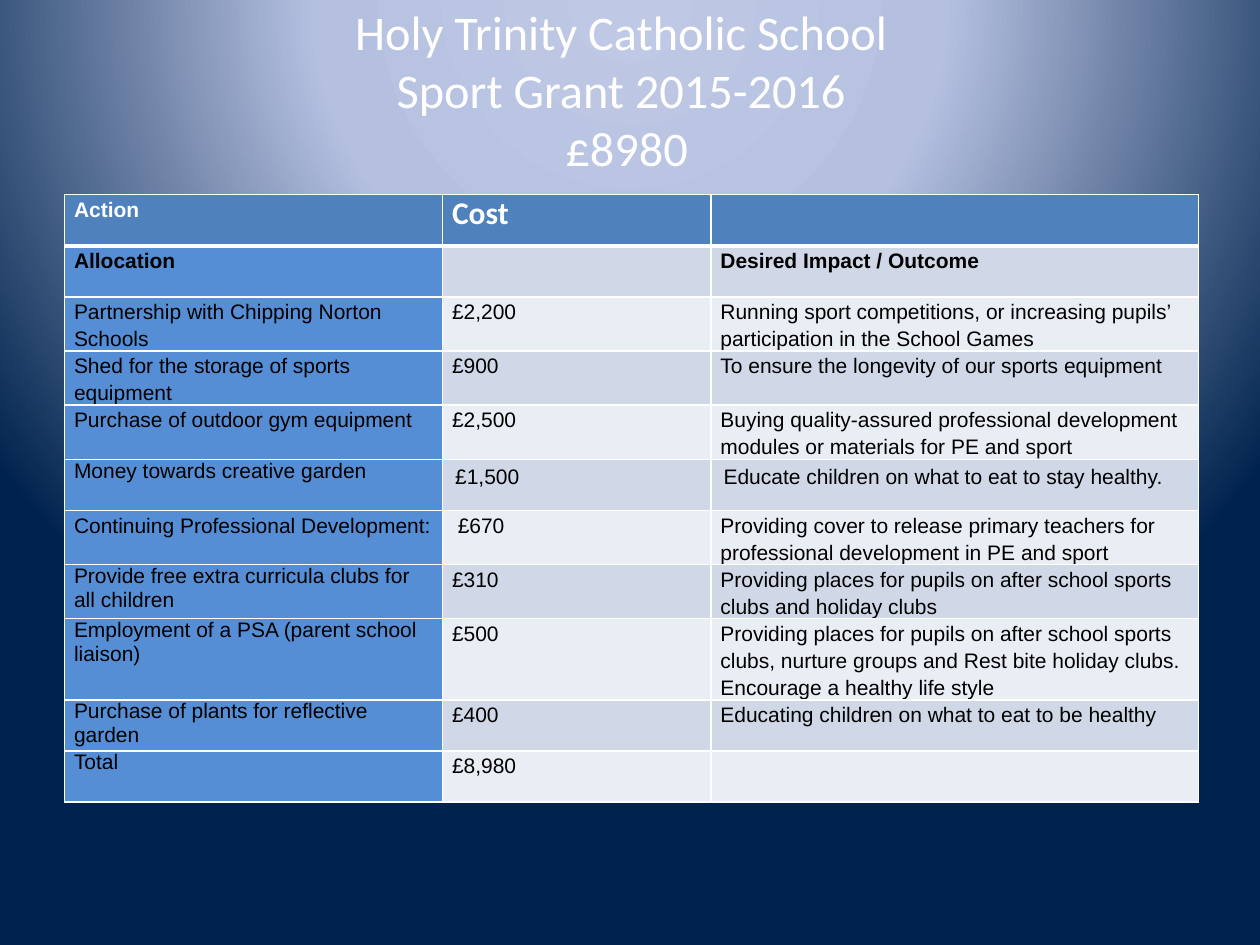
import dataclasses

import lxml.etree
import pptx
import pptx.dml.color
import pptx.enum.text
import pptx.oxml
import pptx.oxml.ns
import pptx.table
import pptx.util

Pt = pptx.util.Pt
qn = pptx.oxml.ns.qn

COLORS = {
    "white": "FFFFFF",
    "black": "000000",
    "header": "4F81BD",
    "action": "558ED5",
    "band_dark": "D0D8E8",
    "band_light": "E9EDF4",
    "glow": "BFC9E5",
    "haze": "B5C0E0",
    "navy": "00234D",
}
COLUMN_WIDTHS = (216, 153.4, 278.6)
ROW_HEIGHT = 29.2


@dataclasses.dataclass(frozen=True)
class GrantRow:
    action: str
    cost: str = ""
    outcome: str = ""
    bold: bool = False
    action_spacing: float = 1.15
    roomy: bool = False
    cost_indent: float = 0


GRANT_ROWS = (
    GrantRow("Action", "Cost", bold=True),
    GrantRow("Allocation", "", "Desired Impact / Outcome", bold=True),
    GrantRow("Partnership with Chipping Norton Schools", "£2,200",
             "Running sport competitions, or increasing pupils’ participation in the School Games"),
    GrantRow("Shed for the storage of sports equipment", "£900",
             "To ensure the longevity of our sports equipment"),
    GrantRow("Purchase of outdoor gym equipment", "£2,500",
             "Buying quality-assured professional development modules or materials for PE and sport"),
    GrantRow("Money towards creative garden", "£1,500",
             "Educate children on what to eat to stay healthy.",
             action_spacing=1, roomy=True),
    GrantRow("Continuing Professional Development:", "£670",
             "Providing cover to release primary teachers for professional development in PE and sport",
             cost_indent=3.3),
    GrantRow("Provide free extra curricula clubs for all children", "£310",
             "Providing places for pupils on after school sports clubs and holiday clubs",
             action_spacing=1),
    GrantRow("Employment of a PSA (parent school liaison)", "£500",
             "Providing places for pupils on after school sports clubs, nurture groups and "
             "Rest bite holiday clubs. Encourage a healthy life style", action_spacing=1),
    GrantRow("Purchase of plants for reflective garden", "£400",
             "Educating children on what to eat to be healthy", action_spacing=1),
    GrantRow("Total", "£8,980", action_spacing=1),
)


def rgb(name: str) -> pptx.dml.color.RGBColor:
    return pptx.dml.color.RGBColor.from_string(COLORS[name])


def paint_background(slide) -> None:
    fill = slide.background.fill
    fill.gradient()
    gradient = slide.element.find(".//" + qn("a:gradFill"))
    for child in list(gradient):
        gradient.remove(child)
    stops = lxml.etree.SubElement(gradient, qn("a:gsLst"))
    for position, name in ((0, "glow"), (40, "haze"), (100, "navy")):
        stop = lxml.etree.SubElement(stops, qn("a:gs"), pos=str(position * 1000))
        lxml.etree.SubElement(stop, qn("a:srgbClr"), val=COLORS[name])
    circle = lxml.etree.SubElement(gradient, qn("a:path"), path="circle")
    lxml.etree.SubElement(circle, qn("a:fillToRect"),
                          l="50000", t="-80000", r="50000", b="180000")


def write_title(slide) -> None:
    title = slide.shapes.title
    title.left, title.top, title.width, title.height = Pt(31), Pt(0), Pt(648), Pt(102)
    frame = title.text_frame
    frame.text = "Holy Trinity Catholic School\vSport Grant 2015-2016\v £8980"
    frame.vertical_anchor = pptx.enum.text.MSO_ANCHOR.MIDDLE
    heading = frame.paragraphs[0]
    heading.alignment = pptx.enum.text.PP_ALIGN.CENTER
    heading.font.name = "Calibri"
    heading.font.size = Pt(27.6)
    heading.font.color.rgb = rgb("white")


def draw_borders(cell: pptx.table._Cell, top: float, bottom: float) -> None:
    properties = cell._tc.get_or_add_tcPr()
    for edge, width in (("lnL", 1), ("lnR", 1), ("lnT", top), ("lnB", bottom)):
        line = lxml.etree.SubElement(properties, qn("a:" + edge), w=str(Pt(width)))
        solid = lxml.etree.SubElement(line, qn("a:solidFill"))
        lxml.etree.SubElement(solid, qn("a:srgbClr"), val=COLORS["white"])


def fill_cell(cell: pptx.table._Cell, row: int, column: int, grant: GrantRow) -> None:
    draw_borders(cell, top=3 if row == 1 else 1, bottom=3 if row == 0 else 1)
    if row == 0:
        fill = "header"
    elif column == 0:
        fill = "action"
    else:
        fill = "band_dark" if row % 2 else "band_light"
    cell.fill.solid()
    cell.fill.fore_color.rgb = rgb(fill)

    if not (grant.roomy and column):
        cell.margin_left = cell.margin_right = Pt(5.4)
        cell.margin_top = cell.margin_bottom = Pt(0)
    if column == 1:
        cell.margin_left += Pt(grant.cost_indent)

    cell.text = (grant.action, grant.cost, grant.outcome)[column]
    entry = cell.text_frame.paragraphs[0]
    is_cost_heading = row == 0 and column == 1
    if column == 0:
        entry.line_spacing = grant.action_spacing
    else:
        entry.line_spacing = 1.0 if grant.roomy or is_cost_heading else 1.15
    entry.font.name = "Calibri" if is_cost_heading else "Arial"
    entry.font.size = Pt(18 if is_cost_heading else 12)
    entry.font.bold = grant.bold
    entry.font.color.rgb = rgb("white" if row == 0 else "black")


def draw_grant_table(slide) -> None:
    table = slide.shapes.add_table(
        len(GRANT_ROWS), len(COLUMN_WIDTHS), Pt(36.9), Pt(111.3),
        Pt(sum(COLUMN_WIDTHS)), Pt(ROW_HEIGHT * len(GRANT_ROWS))).table
    for column, width in enumerate(COLUMN_WIDTHS):
        table.columns[column].width = Pt(width)
    for row, grant in enumerate(GRANT_ROWS):
        table.rows[row].height = Pt(ROW_HEIGHT)
        for column in range(len(COLUMN_WIDTHS)):
            fill_cell(table.cell(row, column), row, column, grant)


def main() -> None:
    presentation = pptx.Presentation()
    presentation.slide_width, presentation.slide_height = Pt(720), Pt(540)
    slide = presentation.slides.add_slide(presentation.slide_layouts[5])
    paint_background(slide)
    write_title(slide)
    draw_grant_table(slide)
    presentation.save("out.pptx")


if __name__ == "__main__":
    main()
